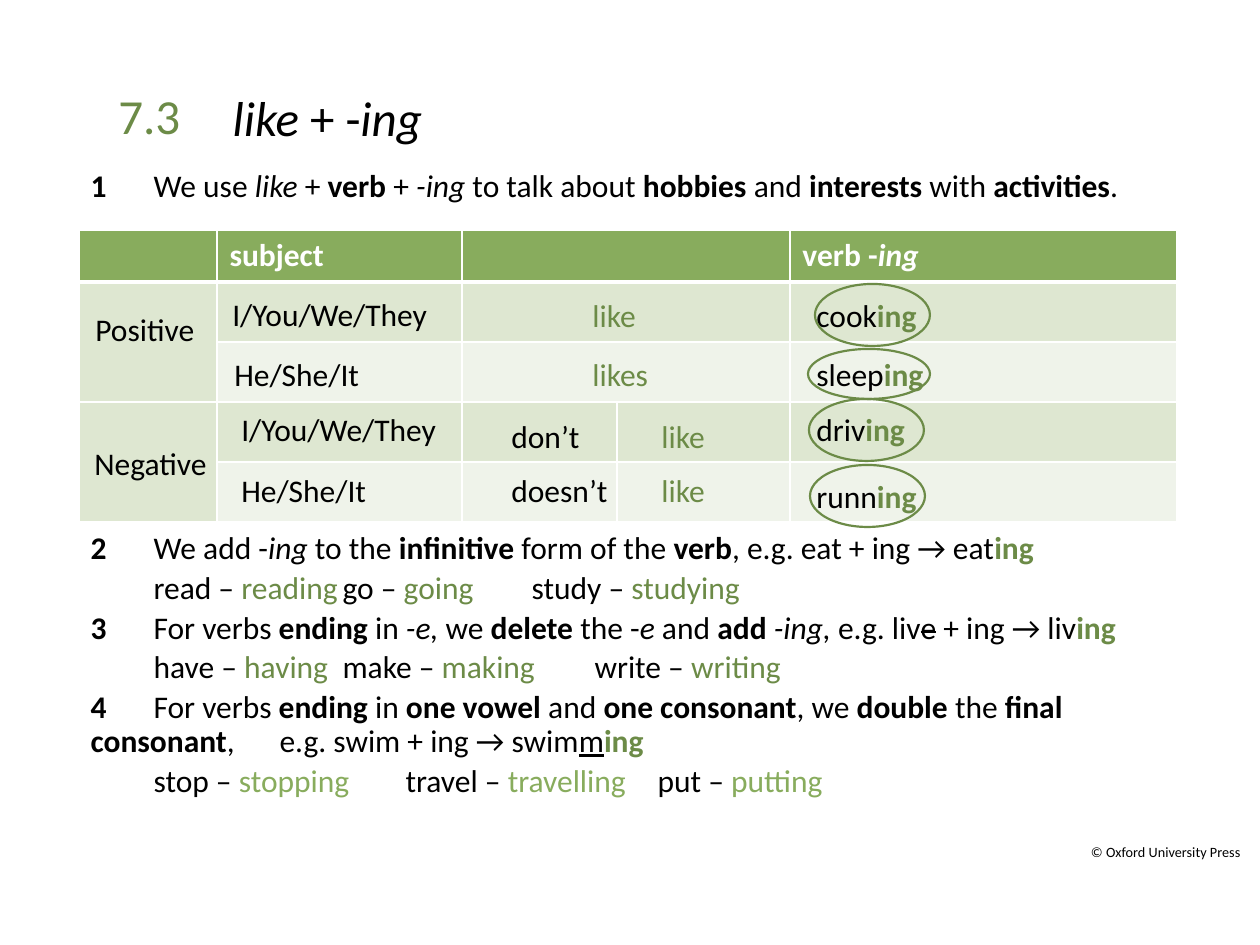
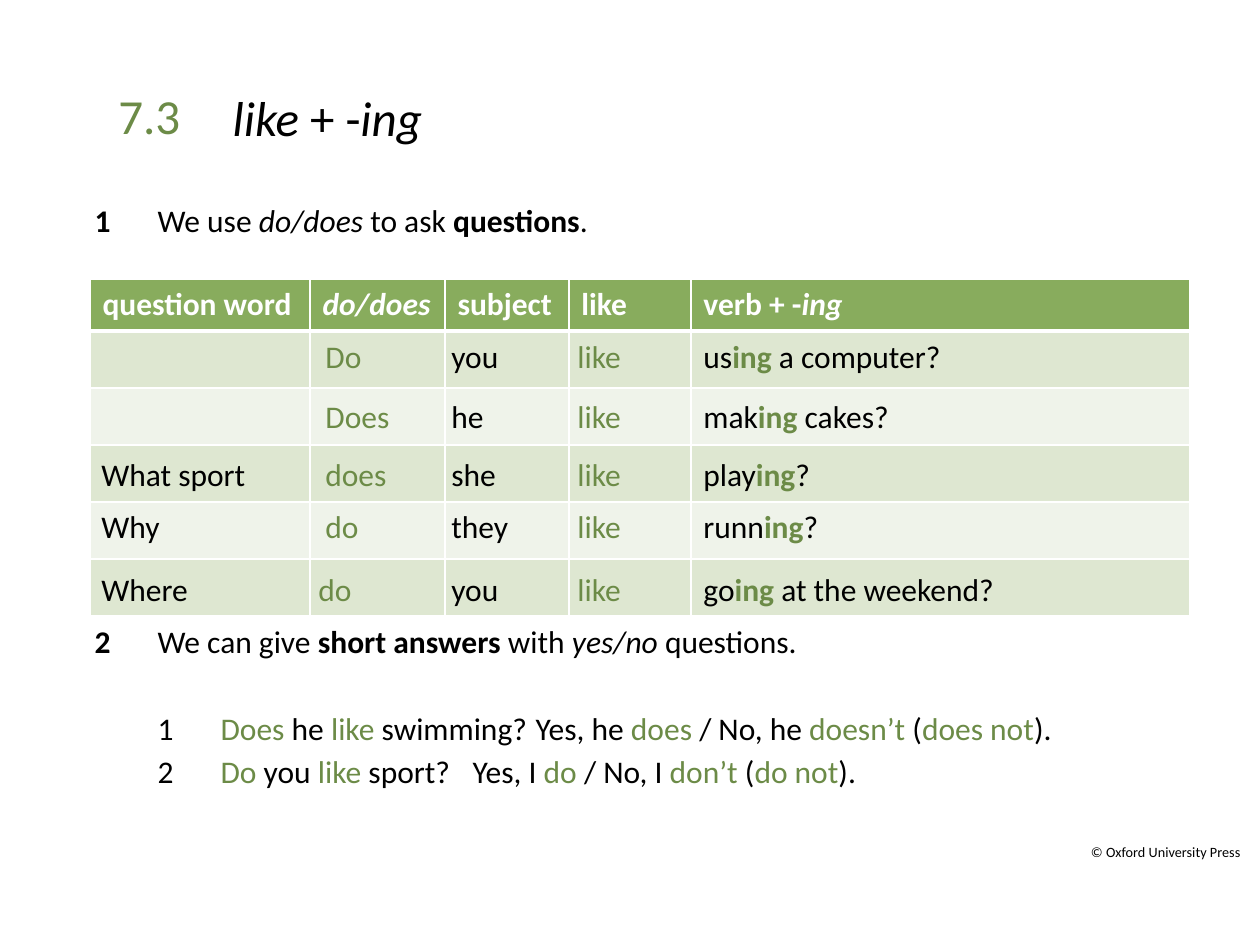
from lxml import etree
from pptx import Presentation
from pptx.dml.color import RGBColor
from pptx.enum.shapes import MSO_SHAPE
from pptx.enum.text import MSO_ANCHOR, MSO_AUTO_SIZE, PP_ALIGN
from pptx.oxml.ns import qn
from pptx.util import Emu, Pt

OVAL = MSO_SHAPE.OVAL
MIDDLE = MSO_ANCHOR.MIDDLE
NO_FIT = MSO_AUTO_SIZE.NONE
LEFT, RIGHT = PP_ALIGN.LEFT, PP_ALIGN.RIGHT

EMU_PER_PX = 914400 / 126
FONT = "Calibri"
COLOURS = {
    "black": "000000",
    "white": "FFFFFF",
    "leaf": "6C8B47",
    "grass": "88AC5D",
    "odd": "DEE7D1",
    "even": "EFF3EA",
}
TAB = 63
INSET = 13
GAP = 3.2
ING = ("ing", "bold leaf")


def px(length):
    return Emu(round(length * EMU_PER_PX))


def colour(name):
    return RGBColor.from_string(COLOURS[name])


class GrammarDeck:
    def __init__(self):
        self.deck = Presentation()
        self.deck.slide_width = px(1260)
        self.deck.slide_height = px(945)
        self.layout = self.deck.slide_layouts[1]
        self.page = None

    def add_page(self, number, title):
        self.page = self.deck.slides.add_slide(self.layout)
        if len(self.deck.slides) == 1:
            self.add_footer("© Oxford University Press")
        heading = self.page.shapes.title
        self.place(heading, 220, 38, 240, 158)
        heading.text_frame.vertical_anchor = MIDDLE
        self.add_spans(heading.text_frame.paragraphs[0], title, 28)
        self.add_label(106, 79, 115, 72, [(number, "leaf")], size=28)

    def add_footer(self, text):
        box = self.add_label(1053, 834, 200, 33, [(text, "raised")], size=14)
        box.text_frame.paragraphs[0].alignment = RIGHT
        self.layout.shapes.element.append(box.element)

    def place(self, shape, left, top, width, height):
        shape.left, shape.top = px(left), px(top)
        shape.width, shape.height = px(width), px(height)
        shape.text_frame.auto_size = NO_FIT

    def add_spans(self, para, spans, size=18, base="black"):
        para.alignment = LEFT
        for item in spans:
            text, style = (item, "") if isinstance(item, str) else item
            words = style.split()
            span = para.add_run()
            span.text = text
            font = span.font
            font.name, font.size = FONT, Pt(size)
            font.bold, font.italic = "bold" in words, "italic" in words
            font.underline = "under" in words
            font.color.rgb = colour(next((w for w in words if w in COLOURS), base))
            if "struck" in words:
                span._r.get_or_add_rPr().set("strike", "sngStrike")
            if "raised" in words:
                span._r.get_or_add_rPr().set("baseline", "30000")

    def set_tabs(self, para, stops):
        tabs = etree.SubElement(para._p.get_or_add_pPr(), qn("a:tabLst"))
        for stop in stops:
            etree.SubElement(tabs, qn("a:tab"), pos=str(px(stop)), algn="l")

    def add_body(self, left, top, width, height, rules, line_spacing):
        body = self.page.placeholders[1]
        self.place(body, left, top, width, height)
        frame = body.text_frame
        for index, (before, stops, spans) in enumerate(rules):
            para = frame.add_paragraph() if index else frame.paragraphs[0]
            settings = para._p.get_or_add_pPr()
            settings.set("marL", "0")
            settings.set("indent", "0")
            etree.SubElement(settings, qn("a:buNone"))
            self.set_tabs(para, [stop * TAB for stop in stops])
            para.line_spacing = line_spacing
            para.space_before = Pt(before)
            self.add_spans(para, spans)

    def add_label(self, left, top, width, height, spans, size=18, stops=()):
        box = self.page.shapes.add_textbox(px(left), px(top), px(width), px(height))
        box.text_frame.word_wrap = bool(stops)
        para = box.text_frame.paragraphs[0]
        if stops:
            self.set_tabs(para, stops)
        self.add_spans(para, spans, size)
        return box

    def add_ring(self, left, top, width, height):
        ring = self.page.shapes.add_shape(OVAL, px(left), px(top), px(width), px(height))
        ring.shadow.inherit = False
        ring.fill.background()
        ring.line.color.rgb = colour("leaf")
        ring.line.width = Pt(1.25)

    def add_grid(self, left, top, widths, heights, headers, merges=()):
        frame = self.page.shapes.add_table(
            len(heights), len(widths), px(left), px(top), px(sum(widths)), px(sum(heights)))
        table = frame.table
        for column, width in zip(table.columns, widths):
            column.width = px(width)
        for row, height in zip(table.rows, heights):
            row.height = px(height)
        for r in range(len(heights)):
            fill = "grass" if r == 0 else "odd" if r % 2 else "even"
            for c in range(len(widths)):
                cell = table.cell(r, c)
                self.add_borders(cell, top=3 if r == 1 else 1, bottom=3 if r == 0 else 1)
                cell.fill.solid()
                cell.fill.fore_color.rgb = colour(fill)
        for first, last in merges:
            table.cell(*first).merge(table.cell(*last))
        for c, spans in headers.items():
            self.add_spans(table.cell(0, c).text_frame.paragraphs[0], spans, base="white")

    def add_borders(self, cell, top, bottom):
        settings = cell._tc.get_or_add_tcPr()
        for side, points in (("L", 1), ("R", 1), ("T", top), ("B", bottom)):
            line = etree.SubElement(settings, qn(f"a:ln{side}"), w=str(Pt(points)))
            paint = etree.SubElement(line, qn("a:solidFill"))
            etree.SubElement(paint, qn("a:srgbClr"), val=COLOURS["white"])


def add_statements(guide):
    guide.add_body(78, 164, 1148, 672, [
        (0, [1], [("1", "bold"), "\tWe use ", ("like ", "italic"), "+ ", ("verb", "bold"), " + ",
                  ("-ing", "italic"), " to talk about ", ("hobbies", "bold"), " and ",
                  ("interests", "bold"), " with ", ("activities", "bold"), "."]),
        (187.6, [1], [("2", "bold"), "\tWe add -", ("ing", "italic"), " to the ",
                      ("infinitive", "bold"), " form of the ", ("verb", "bold"),
                      ", e.g. eat + ing → eat", ING]),
        (GAP, [1, 5, 8], ["\tread – ", ("reading", "leaf"), "\tgo – ", ("going", "leaf"),
                          "\tstudy – ", ("studying", "leaf")]),
        (GAP, [1], [("3\t", "bold"), "For verbs ", ("ending", "bold"), " in ", ("-e,", "italic"),
                    " we ", ("delete", "bold"), " the -", ("e", "italic"), " and ",
                    ("add ", "bold"), ("-ing, ", "italic"), "e.g. liv", ("e", "struck"),
                    " + ing → liv", ING]),
        (GAP, [1, 5, 9], ["\thave – ", ("having", "leaf"), "\tmake – ", ("making", "leaf"),
                          "\twrite – ", ("writing", "leaf")]),
        (GAP, [1, 3], [("4", "bold"), "\tFor verbs ", ("ending", "bold"), " in ",
                       ("one vowel ", "bold"), "and ", ("one consonant", "bold"), ", we ",
                       ("double", "bold"), " the ", ("final consonant", "bold"),
                       ", \te.g. swim + ing → swim", ("m", "under"), ING]),
        (GAP, [1, 5, 9], ["\tstop – ", ("stopping", "grass"), "\ttravel – ",
                          ("travelling", "grass"), "\tput – ", ("putting", "grass")]),
    ], line_spacing=0.9)
    guide.add_grid(
        79, 230, [138, 245, 155, 173, 387], [52] + [60] * 4,
        {1: [("subject", "bold")], 4: [("verb -", "bold"), ("ing", "bold italic")]},
        merges=[((r, 2), (r, 3)) for r in range(3)] + [((r, 0), (r + 1, 0)) for r in (1, 3)])

    like = ("like", "leaf")
    labels = [
        (83, 304, 126, "Positive"), (82, 438, 140, "Negative"),
        (220, 289, 226, "I/You/We/They"), (222, 349, 151, "He/She/It"),
        (229, 404, 226, "I/You/We/They"), (229, 465, 151, "He/She/It"),
        (580, 290, 71, like), (580, 349, 83, ("likes", "leaf")),
        (499, 411, 95, "don’t"), (499, 465, 122, "doesn’t"),
        (649, 411, 71, like), (649, 465, 71, like),
    ]
    for left, top, width, span in labels:
        guide.add_label(left, top, width, 50, [span])
    for top, width, stem in ((290, 129, "cook"), (349, 134, "sleep"),
                             (404, 115, "driv"), (471, 126, "runn")):
        guide.add_label(804, top, width, 50, [stem, ING])
    for ring in ((815, 284, 115, 62), (808, 349, 122, 50),
                 (809, 399, 115, 62), (810, 465, 115, 62)):
        guide.add_ring(*ring)


def add_questions(guide):
    guide.add_body(82, 195, 1134, 605, [
        (0, [1], [("1", "bold"), "\tWe use ", ("do/does ", "italic"), "to ask ",
                  ("questions", "bold"), "."]),
        (218.6, [1], [("2\t", "bold"), "We can give ", ("short answers ", "bold"), "with ",
                      ("yes/no ", "italic"), "questions."]),
        (28.3, [1, 2, 8], ["\t1\t", ("Does", "leaf"), " he ", ("like", "leaf"),
                           " swimming?\tYes, he ", ("does ", "leaf"), "/ No, he ",
                           ("doesn’t", "leaf"), " (", ("does not", "leaf"), ")."]),
        (GAP, [1, 2, 8], ["\t2\t", ("Do", "leaf"), " you ", ("like", "leaf"),
                          " sport?\tYes, I ", ("do ", "leaf"), "/ No, I ",
                          ("don’t", "leaf"), " (", ("do not", "leaf"), ")."]),
    ], line_spacing=1.0)
    headers = [[("question word", "bold")], [("do/does", "bold italic")], [("subject", "bold")],
               [("like", "bold")], [("verb + -", "bold"), ("ing", "bold italic")]]
    guide.add_grid(90, 279, [220, 135, 124, 122, 499], [52] + [57] * 5,
                   dict(enumerate(headers)))

    questions = [
        (331, 648, "", 326, "Do", "you", "us", " a computer?"),
        (391, 596, "", 326, "Does", "he", "mak", " cakes?"),
        (449, 742, "What sport", 326, "does", "she", "play", "?"),
        (501, 750, "Why", 326, "do", "they", "runn", "?"),
        (564, 929, "Where", 319, "do", "you", "go", " at the weekend?"),
    ]
    for top, width, word, helper_left, helper, subject, stem, ending in questions:
        left = 89 if word else helper_left - INSET
        columns = [helper_left, 452, 578, 704] if word else [452, 578, 704]
        opening = [f"{word}\t"] if word else []
        guide.add_label(
            left, top, width, 50,
            opening + [(f"{helper}\t", "leaf"), subject, ("\tlike\t", "leaf"), stem, ING, ending],
            stops=[column - left - INSET for column in columns])


def main():
    guide = GrammarDeck()
    title = [("like", "italic"), " + -", ("ing", "italic")]
    for add_content in (add_statements, add_questions):
        guide.add_page("7.3", title)
        add_content(guide)
    guide.deck.save("out.pptx")


if __name__ == "__main__":
    main()
